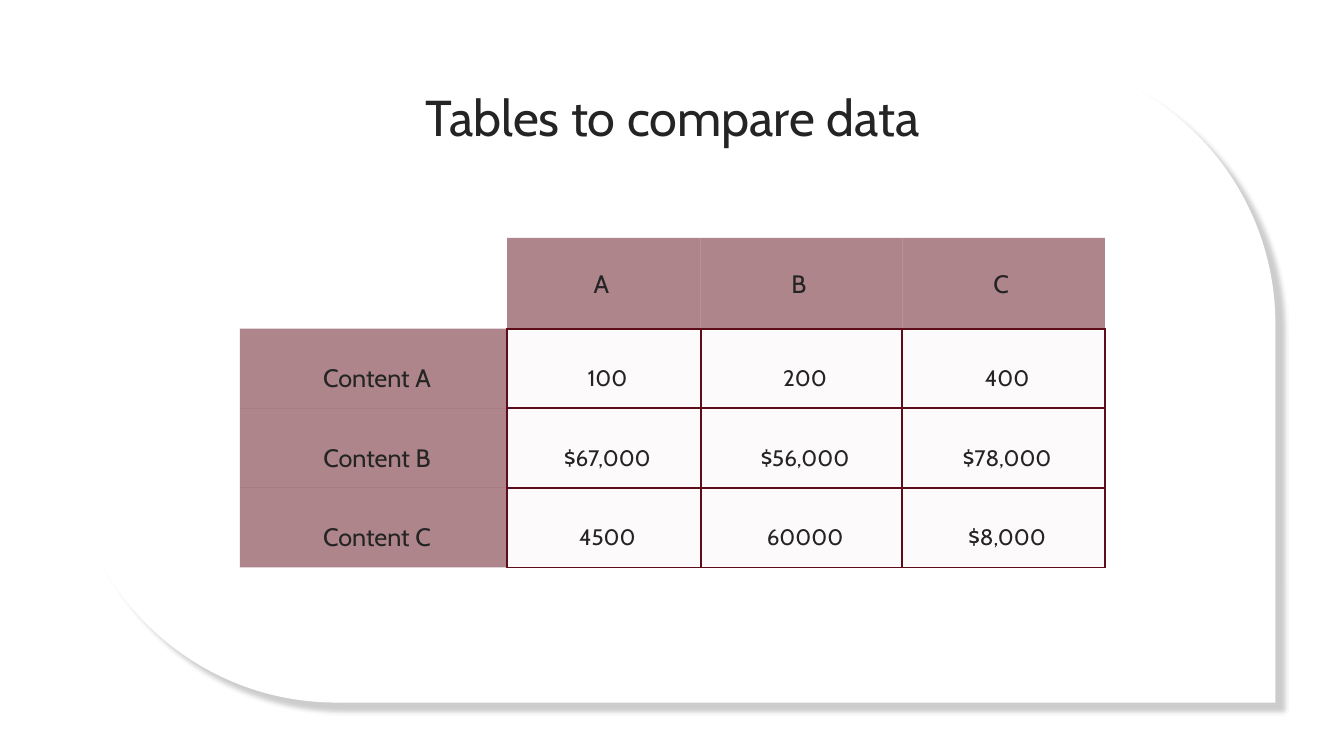
from lxml import etree
from pptx import Presentation
from pptx.dml.color import RGBColor
from pptx.enum.shapes import MSO_SHAPE
from pptx.enum.text import MSO_ANCHOR, MSO_AUTO_SIZE, PP_ALIGN
from pptx.oxml.ns import qn
from pptx.util import Inches, Pt

CENTER = PP_ALIGN.CENTER
TOP, MIDDLE = MSO_ANCHOR.TOP, MSO_ANCHOR.MIDDLE
FIT_SHAPE = MSO_AUTO_SIZE.SHAPE_TO_FIT_TEXT
ROUND_DIAGONAL = MSO_SHAPE.ROUND_2_DIAG_RECTANGLE

FONT = "Cabin"
COLORS = {
    "card": "FFFFFF",
    "shadow": "000000",
    "text": "242425",
    "wine": "5D0D17",
    "blush": "C1948B",
}
NO_STYLE = "{2D5ABB26-0587-4C30-8999-92F81FD0307C}"
COLUMN_WIDTHS = [2.65, 1.92, 2, 2.01]
ROW_HEIGHTS = [0.9, 0.79, 0.79, 0.79]
ROWS = [
    ["", "A", "B", "C"],
    ["Content A", "100", "200", "400"],
    ["Content B", "$67,000", "$56,000", "$78,000"],
    ["Content C", "4500", "60000", "$8,000"],
]
# Left, top, right, bottom
HEADER_INSETS = (0, 0.31, 0.05, 0)
BODY_INSETS = (0.12, 0.22, 0.05, 0.02)


def rgb(name):
    return RGBColor.from_string(COLORS[name])


def add_color(parent, name, alpha=100):
    color = etree.SubElement(parent, qn("a:srgbClr"), val=COLORS[name])
    etree.SubElement(color, qn("a:alpha"), val=str(alpha * 1000))


def write(frame, text, size):
    paragraph = frame.paragraphs[0]
    paragraph.alignment = CENTER
    run = paragraph.add_run()
    run.text = text
    run.font.name = FONT
    run.font.size = Pt(size)
    run.font.color.rgb = rgb("text")


def add_card(slide, left, top, width, height):
    card = slide.shapes.add_shape(
        ROUND_DIAGONAL, Inches(left), Inches(top), Inches(width), Inches(height))
    card.adjustments[0] = 0
    card.adjustments[1] = 0.414
    card.fill.solid()
    card.fill.fore_color.rgb = rgb("card")
    card.line.fill.background()
    # Soft shadow towards the lower right
    card.shadow.inherit = False
    effects = card._element.spPr.find(qn("a:effectLst"))
    shadow = etree.SubElement(
        effects, qn("a:outerShdw"), blurRad=str(Pt(2)), dist=str(Pt(10)),
        dir=str(45 * 60000), algn="tl", rotWithShape="0")
    add_color(shadow, "shadow", 20)


def add_title(slide, left, top, width, height):
    title = slide.shapes.add_textbox(
        Inches(left), Inches(top), Inches(width), Inches(height))
    title.text_frame.word_wrap = True
    title.text_frame.auto_size = FIT_SHAPE
    write(title.text_frame, "Tables to compare data", 36)


def set_borders(cell, sides):
    """Draw the named sides (L, R, T, B) and clear the others."""
    properties = cell._tc.get_or_add_tcPr()
    for position, side in enumerate("LRTB"):
        line = etree.Element(qn(f"a:ln{side}"), w=str(Pt(1.5)))
        if side in sides:
            add_color(etree.SubElement(line, qn("a:solidFill")), "wine")
        else:
            etree.SubElement(line, qn("a:noFill"))
        properties.insert(position, line)


def fill_cell(cell, color, alpha):
    cell.fill.solid()
    cell.fill.fore_color.rgb = rgb(color)
    tint = cell._tc.tcPr.find(".//" + qn("a:srgbClr"))
    etree.SubElement(tint, qn("a:alpha"), val=str(alpha * 1000))


def style_cell(cell, text, is_header, is_label):
    if not text:
        cell.fill.background()
        set_borders(cell, "")
        return
    insets = HEADER_INSETS if is_header else BODY_INSETS
    (cell.margin_left, cell.margin_top,
     cell.margin_right, cell.margin_bottom) = map(Inches, insets)
    cell.vertical_anchor = TOP if is_header else MIDDLE
    if is_header or is_label:
        write(cell.text_frame, text, 18)
        fill_cell(cell, "wine", 50)
        set_borders(cell, "B" if is_header else "R")
    else:
        write(cell.text_frame, text, 16)
        fill_cell(cell, "blush", 4)
        set_borders(cell, "LRTB")


def add_comparison(slide, left, top, width, height):
    table = slide.shapes.add_table(
        len(ROWS), len(COLUMN_WIDTHS), Inches(left), Inches(top),
        Inches(width), Inches(height)).table
    table.first_row = table.horz_banding = False
    table._tbl.tblPr.find(qn("a:tableStyleId")).text = NO_STYLE
    for column, column_width in zip(table.columns, COLUMN_WIDTHS):
        column.width = Inches(column_width)
    for row, row_height in zip(table.rows, ROW_HEIGHTS):
        row.height = Inches(row_height)
    for r, values in enumerate(ROWS):
        for c, value in enumerate(values):
            style_cell(table.cell(r, c), value, r == 0, c == 0)


def main():
    prs = Presentation()
    prs.slide_width, prs.slide_height = Inches(13.33), Inches(7.5)
    slide = prs.slides.add_slide(prs.slide_layouts[6])

    # Card, then the table and title sharing one column
    left, width = 2.38, sum(COLUMN_WIDTHS)
    add_card(slide, 0.68, 0.56, 11.97, 6.41)
    add_comparison(slide, left, 2.36, width, sum(ROW_HEIGHTS))
    add_title(slide, left, 0.8, width, 0.71)
    prs.save("out.pptx")


if __name__ == "__main__":
    main()
